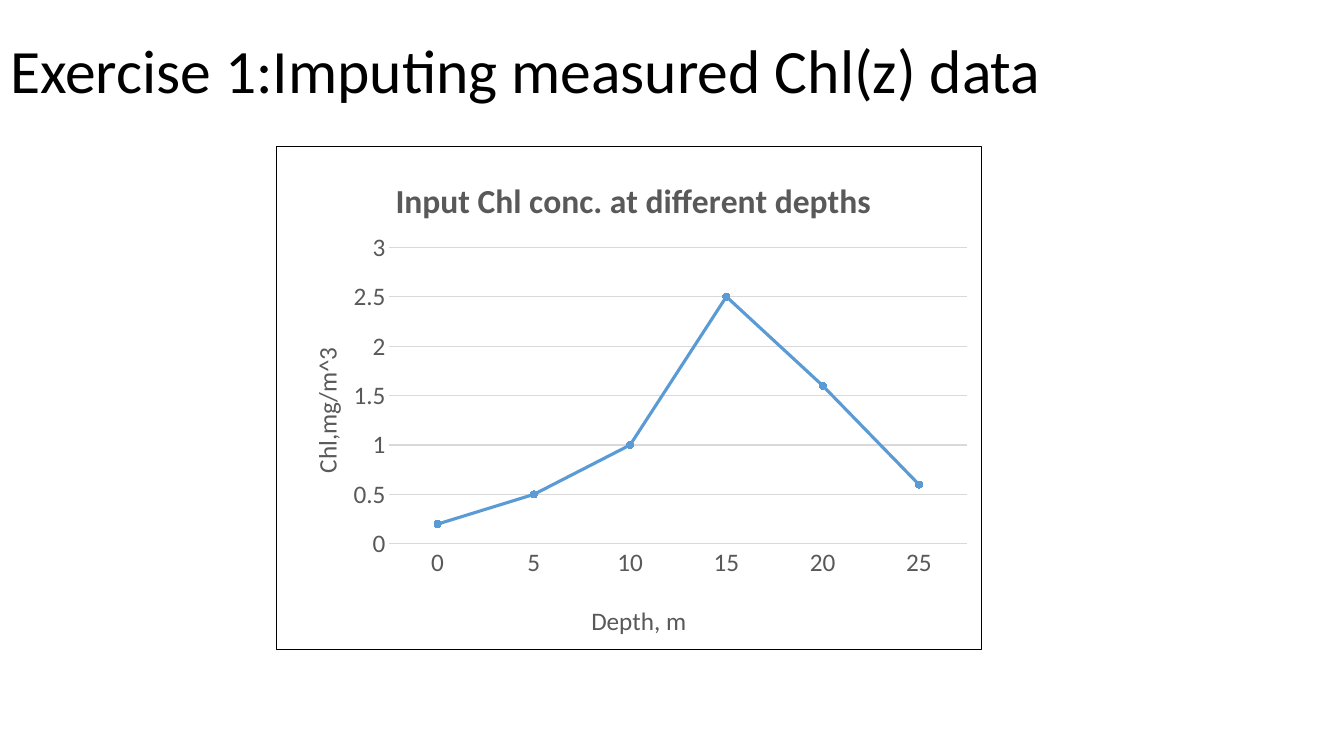
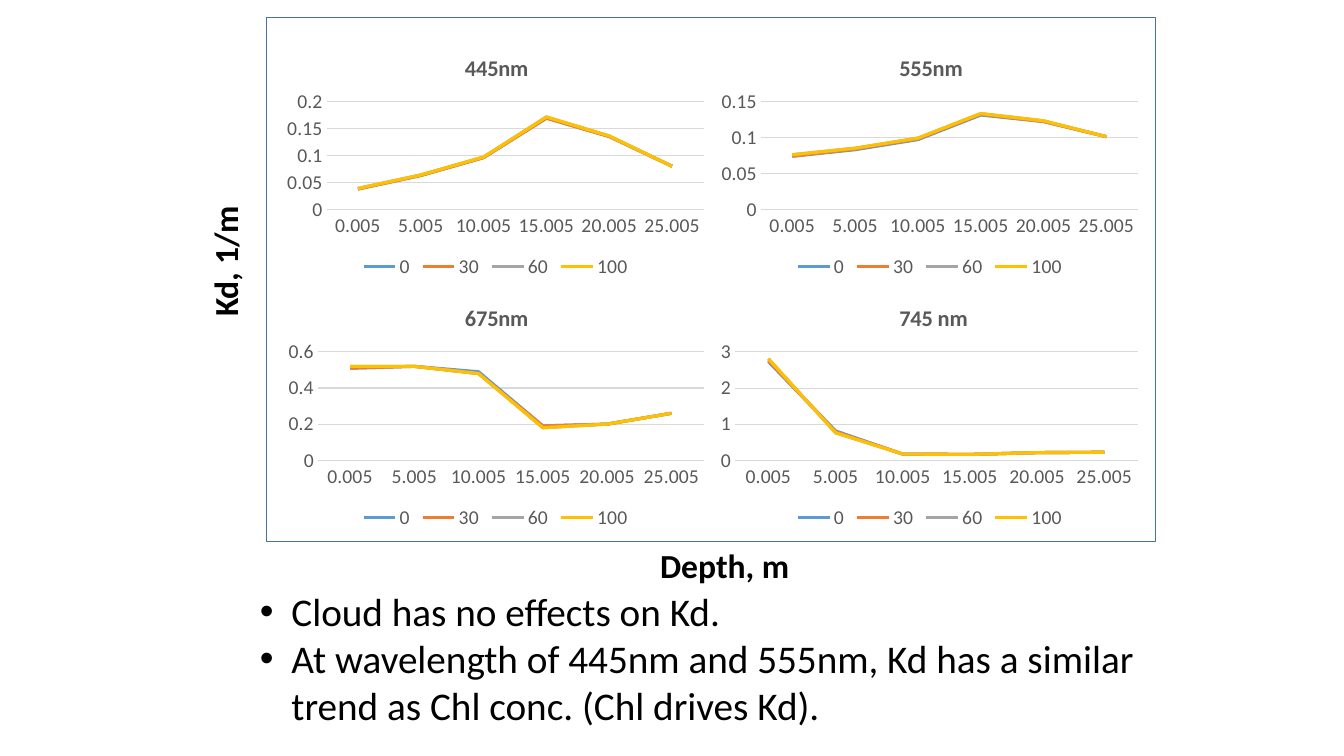
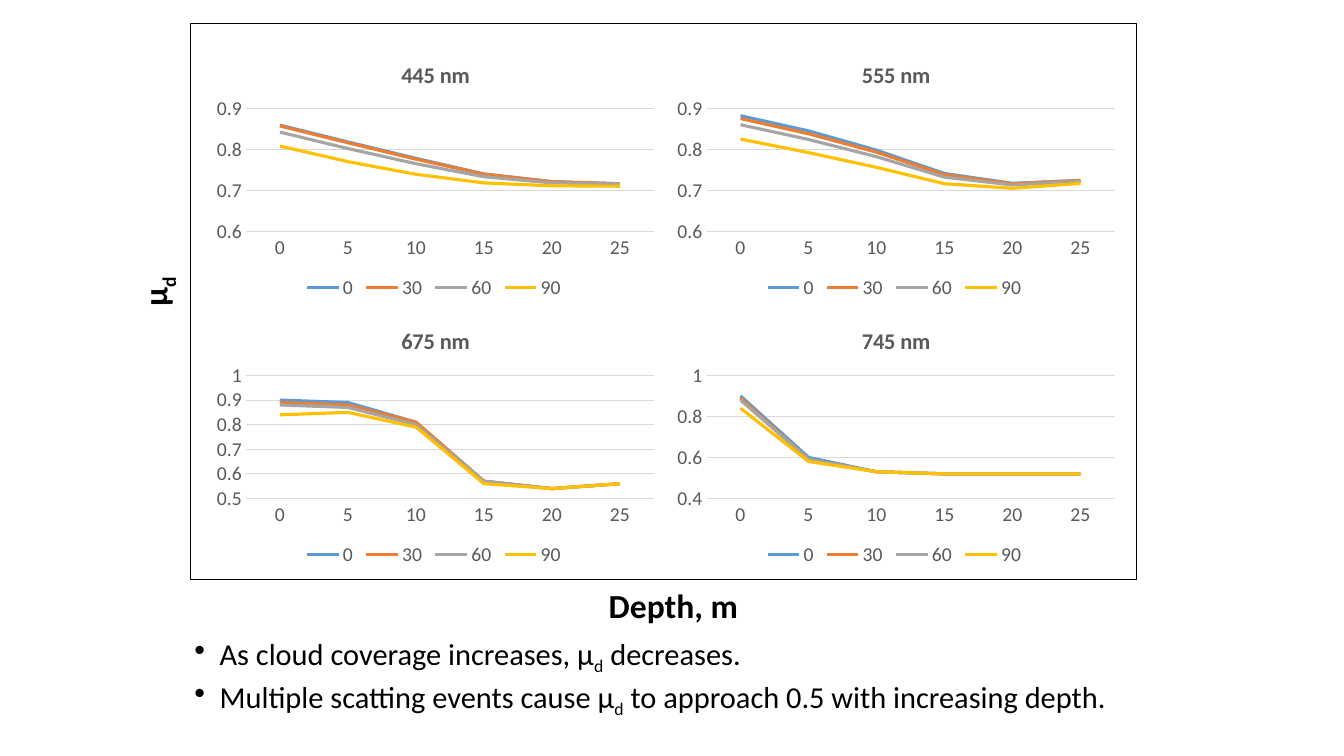
import pptx
import pptx.chart.data
import pptx.dml.color
import pptx.enum.chart
import pptx.enum.shapes
import pptx.enum.text
import pptx.oxml
import pptx.oxml.ns
import pptx.util

Pt = pptx.util.Pt
qn = pptx.oxml.ns.qn

FONT = "Calibri"
COLORS = {"text": "000000", "chart text": "595959", "grid": "D9D9D9", "blue frame": "43739E"}
SERIES_COLORS = ["5B9BD5", "ED7D31", "A5A5A5", "FFC000"]
DEPTHS = ["0", "5", "10", "15", "20", "25"]
TITLE_ONLY, BLANK = 5, 6

CHLOROPHYLL = {
    "title": "Input Chl conc. at different depths",
    "axis": (0, 3, 0.5), "plot": (0.16, 0.2, 0.82, 0.59), "title at": (0.16, 0.05),
    "categories": DEPTHS, "series": {"Series 1": [0.2, 0.5, 1, 2.5, 1.6, 0.6]},
    "size": 18, "title size": 24,
}

ATTENUATION = {
    "origin": (199.2, 22), "step": (310.2, 179), "chart size": (309.6, 180),
    "frame": (190, 12.2, 635, 374.5), "frame line": ("blue frame", 0.25),
    "vertical label": ((142.5, 130.5, 37.5, 103), ["Kd, 1/m"]),
    "horizontal label": (464.4, 386, 236, 30),
    "categories": ["0.005", "5.005", "10.005", "15.005", "20.005", "25.005"],
    "series names": ["0", "30", "60", "100"], "plot rows": (0.28, 0.43),
    "charts": [
        ("445nm", (0, 0.2, 0.05), 0.11, [
            [0.038, 0.063, 0.096, 0.169, 0.135, 0.08],
            [0.038, 0.063, 0.096, 0.169, 0.135, 0.08],
            [0.039, 0.064, 0.097, 0.171, 0.136, 0.08],
            [0.039, 0.064, 0.097, 0.171, 0.136, 0.08]]),
        ("555nm", (0, 0.15, 0.05), 0.11, [
            [0.074, 0.083, 0.097, 0.131, 0.122, 0.101],
            [0.074, 0.084, 0.098, 0.132, 0.122, 0.101],
            [0.076, 0.085, 0.099, 0.133, 0.123, 0.101],
            [0.076, 0.085, 0.099, 0.133, 0.123, 0.101]]),
        ("675nm", (0, 0.6, 0.2), 0.09, [
            [0.51, 0.52, 0.49, 0.19, 0.2, 0.26],
            [0.51, 0.52, 0.48, 0.19, 0.2, 0.26],
            [0.52, 0.52, 0.48, 0.18, 0.2, 0.26],
            [0.52, 0.52, 0.48, 0.18, 0.2, 0.26]]),
        ("745 nm", (0, 3, 1), 0.05, [
            [2.73, 0.81, 0.17, 0.16, 0.21, 0.22],
            [2.76, 0.79, 0.17, 0.16, 0.21, 0.22],
            [2.81, 0.76, 0.17, 0.16, 0.21, 0.22],
            [2.81, 0.76, 0.17, 0.16, 0.21, 0.22]]),
    ],
    "bullets": [["Cloud has no effects on Kd."],
                ["At wavelength of 445nm and 555nm, Kd has a similar trend as "
                 "Chl conc. (Chl drives Kd)."]],
    "bullet box": (178.6, 416, 646.5, 109), "bullet size": 28, "indent": 22.5,
    "bullet spacing": {},
}

MEAN_COSINE = {
    "origin": (146.2, 26.2), "step": (329, 190.5), "chart size": (327.5, 191),
    "frame": (136, 16.6, 675.4, 397.4), "frame line": ("text", 0.5),
    "vertical label": ((92.2, 116.6, 39.6, 109.4), ["μ", "d"]),
    "horizontal label": (427.7, 414, 250, 32),
    "categories": DEPTHS,
    "series names": ["0", "30", "60", "90"], "plot rows": (0.27, 0.46),
    "charts": [
        ("445 nm", (0.6, 0.9, 0.1), 0.09, [
            [0.86, 0.819, 0.779, 0.741, 0.722, 0.717],
            [0.858, 0.817, 0.777, 0.74, 0.722, 0.717],
            [0.843, 0.803, 0.766, 0.734, 0.719, 0.716],
            [0.809, 0.771, 0.74, 0.719, 0.712, 0.711]]),
        ("555 nm", (0.6, 0.9, 0.1), 0.09, [
            [0.883, 0.846, 0.799, 0.742, 0.718, 0.725],
            [0.876, 0.839, 0.794, 0.739, 0.717, 0.725],
            [0.861, 0.825, 0.783, 0.733, 0.714, 0.723],
            [0.826, 0.793, 0.757, 0.717, 0.706, 0.718]]),
        ("675 nm", (0.5, 1, 0.1), 0.09, [
            [0.9, 0.89, 0.81, 0.57, 0.54, 0.56],
            [0.89, 0.88, 0.81, 0.57, 0.54, 0.56],
            [0.88, 0.87, 0.8, 0.57, 0.54, 0.56],
            [0.84, 0.85, 0.79, 0.56, 0.54, 0.56]]),
        ("745 nm", (0.4, 1, 0.2), 0.09, [
            [0.9, 0.6, 0.53, 0.52, 0.52, 0.52],
            [0.89, 0.59, 0.53, 0.52, 0.52, 0.52],
            [0.88, 0.59, 0.53, 0.52, 0.52, 0.52],
            [0.84, 0.58, 0.53, 0.52, 0.52, 0.52]]),
    ],
    # Every second part of a list is a subscript.
    "bullets": [["As cloud coverage increases, μ", "d", " decreases."],
                ["Multiple scatting events cause μ", "d",
                 " to approach 0.5 with increasing depth."]],
    "bullet box": (131.8, 455, 723, 72), "bullet size": 21.7, "indent": 18,
    "bullet spacing": {"line_spacing": 0.7, "space_before": Pt(10)},
}


def points(values):
    return [Pt(value) for value in values]


def rgb(color):
    return pptx.dml.color.RGBColor.from_string(COLORS.get(color, color))


def set_all(target, values):
    for name, value in values.items():
        setattr(target, name, value)


def style_font(font, size, color="text", bold=False):
    set_all(font, {"name": FONT, "size": Pt(size), "bold": bold})
    font.color.rgb = rgb(color)


def style_line(line, color, width):
    line.color.rgb = rgb(color)
    line.width = Pt(width)


def add_runs(paragraph, parts, size, bold=False):
    """Write the parts as runs, with every second one as a subscript."""
    for index, part in enumerate(parts):
        run = paragraph.add_run()
        run.text = part
        style_font(run.font, size, bold=bold)
        if index % 2:
            run.font._element.set("baseline", "-25000")


def add_text_box(slide, box):
    frame = slide.shapes.add_textbox(*points(box)).text_frame
    frame.word_wrap = True
    return frame


def add_label(slide, box, parts, vertical=False):
    frame = add_text_box(slide, box)
    if vertical:
        frame._txBody.bodyPr.set("vert", "vert270")
    add_runs(frame.paragraphs[0], parts, 24, bold=True)


def add_bullets(slide, content):
    frame = add_text_box(slide, content["bullet box"])
    for index, parts in enumerate(content["bullets"]):
        paragraph = frame.add_paragraph() if index else frame.paragraphs[0]
        set_all(paragraph, content["bullet spacing"])
        properties = paragraph._p.get_or_add_pPr()
        properties.set("marL", str(Pt(content["indent"])))
        properties.set("indent", str(-Pt(content["indent"])))
        for tag, name, value in (("a:buFont", "typeface", "Arial"), ("a:buChar", "char", "•")):
            bullet = pptx.oxml.parse_xml(f"<{tag} {pptx.oxml.ns.nsdecls('a')}/>")
            bullet.set(name, value)
            properties.append(bullet)
        add_runs(paragraph, parts, content["bullet size"])


def set_layout(element, position):
    """Fix a plot area or title at fractions of the chart's size."""
    inner = '<c:layoutTarget val="inner"/>' if len(position) == 4 else ""
    modes = '<c:xMode val="edge"/><c:yMode val="edge"/>'
    sizes = "".join(f'<c:{name} val="{value}"/>' for name, value in zip("xywh", position))
    layout = pptx.oxml.parse_xml(
        f"<c:layout {pptx.oxml.ns.nsdecls('c')}><c:manualLayout>{inner}{modes}{sizes}"
        "</c:manualLayout></c:layout>")
    old = element.find(qn("c:layout"))
    if old is not None:
        element.remove(old)
    text = element.find(qn("c:tx"))
    element.insert(0 if text is None else 1, layout)


def write_title(title, text, size, position, color="chart text", bold=False):
    title.text_frame.text = text
    style_font(title.text_frame.paragraphs[0].runs[0].font, size, color, bold)
    set_layout(title._element, position)


def add_line_chart(slide, box, content, markers=False):
    data = pptx.chart.data.CategoryChartData()
    data.categories = content["categories"]
    for name, values in content["series"].items():
        data.add_series(name, values)
    kinds = pptx.enum.chart.XL_CHART_TYPE
    kind = kinds.LINE_MARKERS if markers else kinds.LINE
    chart = slide.shapes.add_chart(kind, *points(box), data).chart
    style_font(chart.font, content["size"], "chart text")
    chart.has_title = True
    write_title(chart.chart_title, content["title"], content["title size"],
                content["title at"], bold=True)
    set_layout(chart._chartSpace.chart.plotArea, content["plot"])

    chart.has_legend = not markers
    if chart.has_legend:
        set_all(chart.legend, {"position": pptx.enum.chart.XL_LEGEND_POSITION.BOTTOM,
                               "include_in_layout": False})
        style_font(chart.legend.font, content["size"], "chart text")
    for axis in (chart.category_axis, chart.value_axis):
        set_all(axis, {"major_tick_mark": pptx.enum.chart.XL_TICK_MARK.NONE,
                       "minor_tick_mark": pptx.enum.chart.XL_TICK_MARK.NONE})
        style_font(axis.tick_labels.font, content["size"], "chart text")
    style_line(chart.category_axis.format.line, "grid", 0.75)
    low, high, step = content["axis"]
    set_all(chart.value_axis, {"minimum_scale": low, "maximum_scale": high, "major_unit": step,
                               "has_major_gridlines": True})
    chart.value_axis.format.line.fill.background()
    style_line(chart.value_axis.major_gridlines.format.line, "grid", 0.75)

    chart.plots[0].vary_by_categories = False
    for series, color in zip(chart.plots[0].series, SERIES_COLORS):
        series.smooth = False
        style_line(series.format.line, color, 2.25)
        if markers:
            set_all(series.marker, {"style": pptx.enum.chart.XL_MARKER_STYLE.CIRCLE, "size": 5})
            series.marker.format.fill.solid()
            series.marker.format.fill.fore_color.rgb = rgb(color)
            style_line(series.marker.format.line, color, 0.75)
    return chart


def add_chart_border(chart, color, width):
    border = pptx.oxml.parse_xml(
        f"<c:spPr {pptx.oxml.ns.nsdecls('c', 'a')}><a:ln w=\"{Pt(width)}\"><a:solidFill>"
        f"<a:srgbClr val=\"{COLORS[color]}\"/></a:solidFill></a:ln></c:spPr>")
    chart._chartSpace.find(qn("c:txPr")).addprevious(border)


def build_input_slide(presentation):
    slide = presentation.slides.add_slide(presentation.slide_layouts[TITLE_ONLY])
    title = slide.shapes.title
    set_all(title, dict(zip(("left", "top", "width", "height"), points((0, 0, 828, 104.4)))))
    title.text_frame.vertical_anchor = pptx.enum.text.MSO_ANCHOR.MIDDLE
    paragraph = title.text_frame.paragraphs[0]
    set_all(paragraph, {"alignment": pptx.enum.text.PP_ALIGN.LEFT, "line_spacing": 0.9})
    add_runs(paragraph, ["Exercise 1:Imputing measured Chl(z) data"], 44)

    chart = add_line_chart(slide, (197.3, 104.4, 504, 360), CHLOROPHYLL, markers=True)
    write_title(chart.category_axis.axis_title, "Depth, m", 18, (0.44, 0.9))
    write_title(chart.value_axis.axis_title, "Chl,mg/m^3", 18, (0.04, 0.39))
    add_chart_border(chart, "text", 0.75)


def build_panel_slide(presentation, content):
    """Four charts in a two by two grid inside a frame, with labels and bullets."""
    slide = presentation.slides.add_slide(presentation.slide_layouts[BLANK])
    left, top = content["origin"]
    across, down = content["step"]
    plot_top, plot_height = content["plot rows"]
    for index, (title, axis, plot_left, values) in enumerate(content["charts"]):
        row, column = divmod(index, 2)
        box = (left + column * across, top + row * down, *content["chart size"])
        add_line_chart(slide, box, {
            "title": title, "title size": 16, "title at": (0.42, 0.07), "size": 14, "axis": axis,
            "plot": (plot_left, plot_top, round(0.98 - plot_left, 2), plot_height),
            "categories": content["categories"],
            "series": dict(zip(content["series names"], values)),
        })
    frame = slide.shapes.add_shape(pptx.enum.shapes.MSO_SHAPE.RECTANGLE,
                                   *points(content["frame"]))
    frame.shadow.inherit = False
    frame.fill.background()
    style_line(frame.line, *content["frame line"])
    add_label(slide, *content["vertical label"], vertical=True)
    add_label(slide, content["horizontal label"], ["Depth, m"])
    add_bullets(slide, content)


def main():
    presentation = pptx.Presentation()
    set_all(presentation, {"slide_width": Pt(960), "slide_height": Pt(540)})
    build_input_slide(presentation)
    for content in (ATTENUATION, MEAN_COSINE):
        build_panel_slide(presentation, content)
    presentation.save("out.pptx")


if __name__ == "__main__":
    main()
